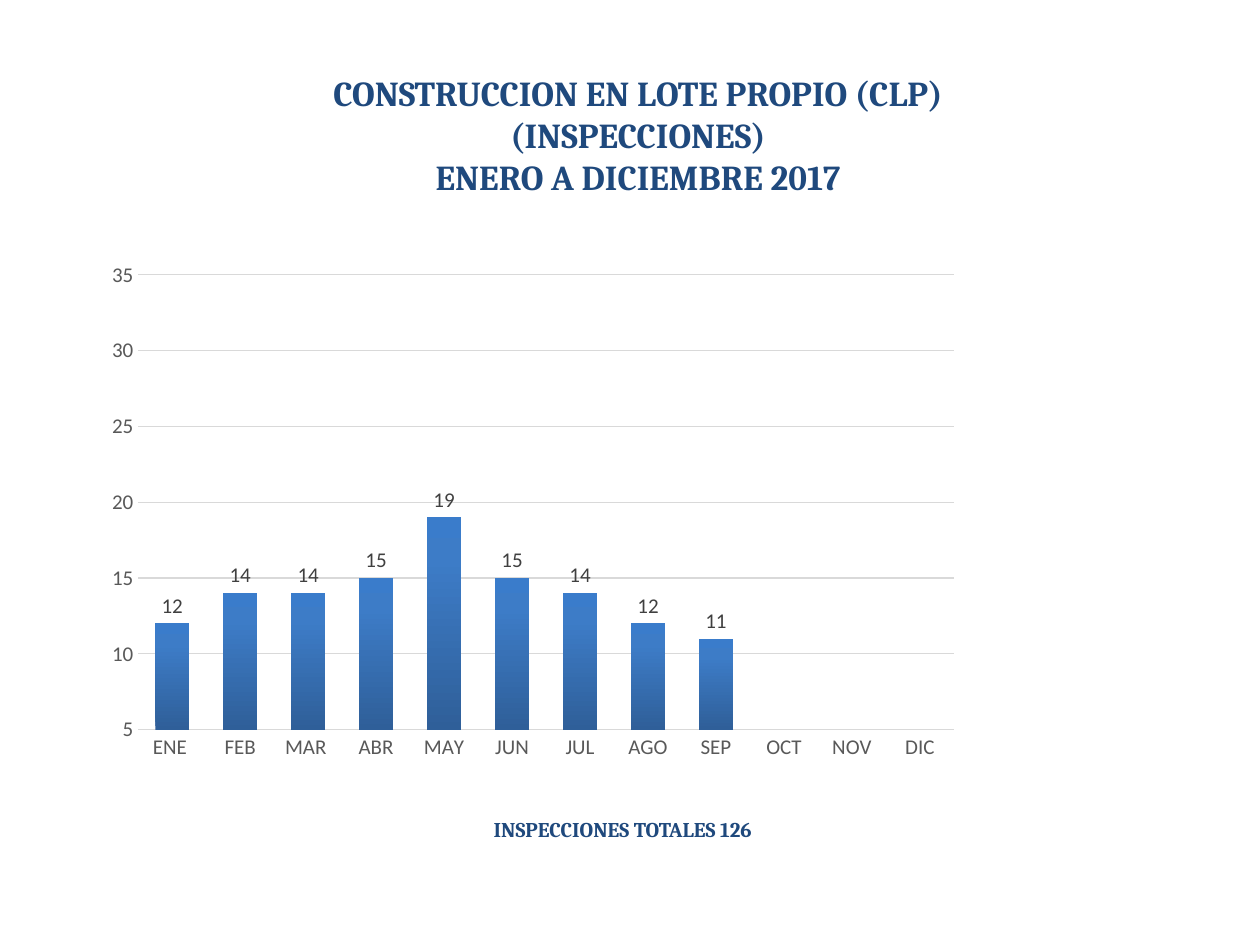
from lxml import etree
from pptx import Presentation
from pptx.chart.data import CategoryChartData
from pptx.dml.color import RGBColor
from pptx.enum.chart import XL_CHART_TYPE as ChartType
from pptx.enum.chart import XL_LABEL_POSITION as LabelPosition
from pptx.enum.chart import XL_TICK_MARK as TickMark
from pptx.enum.text import MSO_ANCHOR as Anchor
from pptx.enum.text import MSO_AUTO_SIZE as AutoSize
from pptx.enum.text import PP_ALIGN as Align
from pptx.oxml.ns import qn
from pptx.util import Pt

COLORS = {
    "heading": "1F497D",
    "axis": "595959",
    "grid": "D9D9D9",
    "label": "404040",
    "text": "000000",
    "bar_bottom": "2F5F99",
    "bar_middle": "3D7CC7",
    "bar_top": "3A7CCB",
}
BAR_STOPS = [(0, "bar_bottom"), (80, "bar_middle"), (100, "bar_top")]

TITLE = [
    "CONSTRUCCION EN LOTE PROPIO (CLP)",
    "(INSPECCIONES)",
    "ENERO A DICIEMBRE 2017",
]
TOTAL = ["INSPECCIONES TOTALES 126"]
MONTHS = ["ENE ", "FEB", "MAR ", "ABR", "MAY", "JUN",
          "JUL", "AGO", "SEP", "OCT", "NOV", "DIC"]
INSPECTIONS = [12, 14, 14, 15, 19, 15, 14, 12, 11, None, None, None]

# Left, top, width, height in points
TITLE_BOX = (176.4, 37.44, 376.56, 79.92)
CHART_BOX = (54, 144, 501.12, 295.92)
TOTAL_BOX = (275.04, 462.96, 232.56, 21.6)


def rgb(name):
    return RGBColor.from_string(COLORS[name])


def set_font(font, name, size, color, bold=False):
    formats = {"name": name, "size": Pt(size), "bold": bold}
    for key, value in formats.items():
        setattr(font, key, value)
    font.color.rgb = rgb(color)


def add_heading(page, box, lines, size, align, anchor, wrap):
    shape = page.shapes.add_textbox(*map(Pt, box))
    frame = shape.text_frame
    formats = {"word_wrap": wrap, "vertical_anchor": anchor,
               "auto_size": AutoSize.SHAPE_TO_FIT_TEXT}
    for key, value in formats.items():
        setattr(frame, key, value)
    for index, line in enumerate(lines):
        para = frame.add_paragraph() if index else frame.paragraphs[0]
        para.alignment = align
        span = para.add_run()
        span.text = line
        set_font(span.font, "Cambria", size, "heading", bold=True)


def fill_bars(series):
    """Three-stop gradient running from the foot of each bar to its top."""
    series.format.fill.gradient()
    gradient = series.format.fill._xPr.find(qn("a:gradFill"))
    stops = gradient.find(qn("a:gsLst"))
    for stop in list(stops):
        stops.remove(stop)
    for percent, color in BAR_STOPS:
        stop = etree.SubElement(stops, qn("a:gs"), pos=str(percent * 1000))
        etree.SubElement(stop, qn("a:srgbClr"), val=COLORS[color])
    gradient.find(qn("a:lin")).set("ang", str(270 * 60000))


def add_inspections_chart(page, box):
    data = CategoryChartData()
    data.categories = MONTHS
    data.add_series("Series 1", INSPECTIONS)
    chart = page.shapes.add_chart(
        ChartType.COLUMN_CLUSTERED, *map(Pt, box), data).chart
    chart.has_legend = False
    chart.has_title = False
    set_font(chart.font, "Calibri", 10, "text")

    # Axes
    for axis in (chart.category_axis, chart.value_axis):
        axis.major_tick_mark = axis.minor_tick_mark = TickMark.NONE
        set_font(axis.tick_labels.font, "Calibri", 12, "axis")
    months, counts = chart.category_axis, chart.value_axis
    counts.minimum_scale, counts.maximum_scale, counts.major_unit = 5, 35, 5
    counts.has_major_gridlines = True
    counts.format.line.fill.background()
    for line, width in ((months.format.line, 1),
                        (counts.major_gridlines.format.line, 0.75)):
        line.color.rgb = rgb("grid")
        line.width = Pt(width)

    # Bars and their values
    plot = chart.plots[0]
    plot.gap_width, plot.overlap, plot.vary_by_categories = 100, -24, False
    series = plot.series[0]
    fill_bars(series)
    labels = series.data_labels
    labels.show_value = True
    labels.position = LabelPosition.OUTSIDE_END
    set_font(labels.font, "Calibri", 12, "label")


def main():
    deck = Presentation()
    deck.slide_width, deck.slide_height = Pt(720), Pt(540)
    page = deck.slides.add_slide(deck.slide_layouts[6])
    add_heading(page, TITLE_BOX, TITLE, 20, Align.CENTER, Anchor.TOP, False)
    add_inspections_chart(page, CHART_BOX)
    add_heading(page, TOTAL_BOX, TOTAL, 12, Align.LEFT, Anchor.BOTTOM, True)
    deck.save("out.pptx")


if __name__ == "__main__":
    main()
